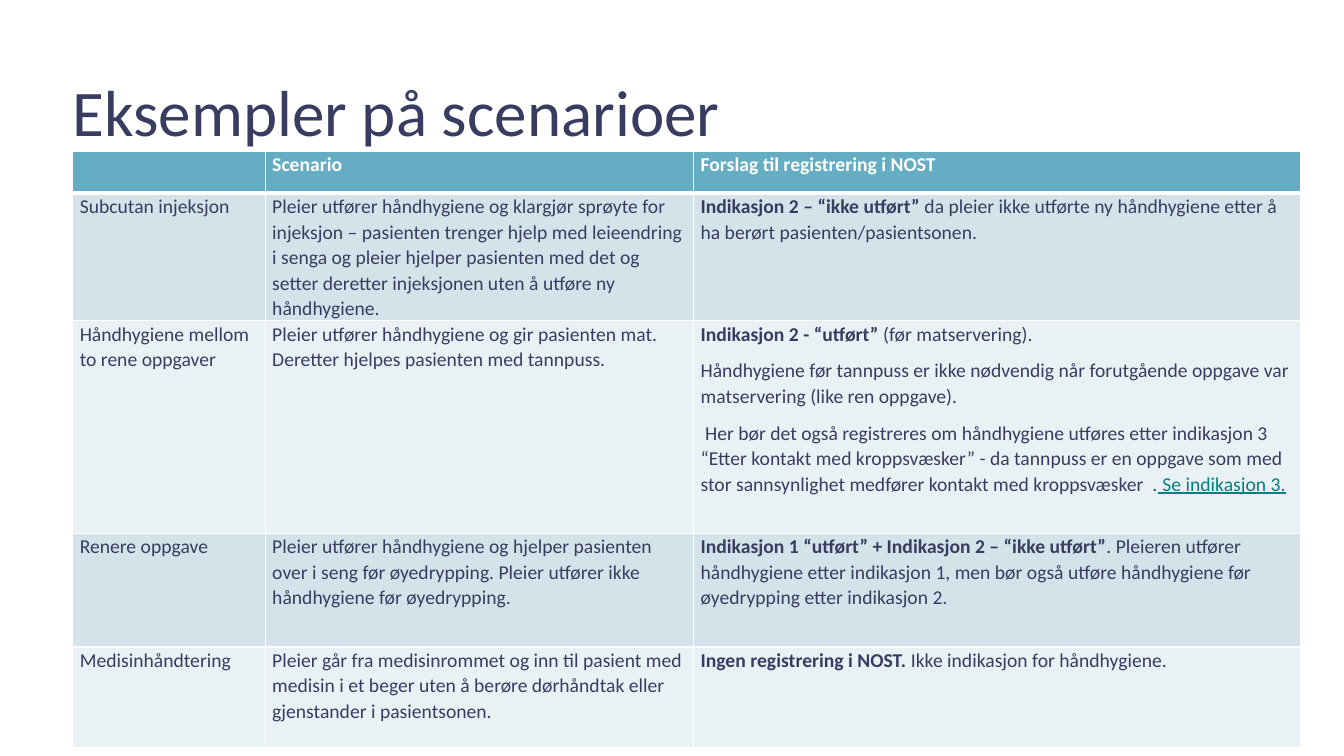
import pptx
import pptx.dml.color
import pptx.enum.text
import pptx.oxml
import pptx.oxml.ns
import pptx.util

Pt = pptx.util.Pt

TITLE = "Eksempler på scenarioer"

# A row is a list of cells, a cell a list of paragraphs, a paragraph a list of (style, text).
ROWS = [
    [
        [],
        [[("header", "Scenario")]],
        [[("header", "Forslag til registrering i NOST")]],
    ],
    [
        [[("body", "Subcutan injeksjon")]],
        [[("body", "Pleier utfører håndhygiene og klargjør sprøyte for injeksjon – pasienten "
                   "trenger hjelp med leieendring i senga og pleier hjelper pasienten med det "
                   "og setter deretter injeksjonen uten å utføre ny håndhygiene.")]],
        [[("strong", "Indikasjon 2 – “ikke utført”"),
          ("body", " da pleier ikke utførte ny håndhygiene etter å ha berørt "
                   "pasienten/pasientsonen.")]],
    ],
    [
        [[("body", "Håndhygiene mellom to rene oppgaver")]],
        [[("body", "Pleier utfører håndhygiene og gir pasienten mat. Deretter hjelpes "
                   "pasienten med tannpuss.")]],
        [
            [("strong", "Indikasjon 2 - “utført”"), ("body", " (før matservering).")],
            [("body", "Håndhygiene før tannpuss er ikke nødvendig når forutgående oppgave var "
                      "matservering (like ren oppgave).")],
            [("body", " Her bør det også registreres om håndhygiene utføres etter indikasjon 3 "
                      "“Etter kontakt med kroppsvæsker” - da tannpuss er en oppgave som med "
                      "stor sannsynlighet medfører kontakt med kroppsvæsker  ."),
             ("link", " Se indikasjon 3.")],
        ],
    ],
    [
        [[("body", "Renere oppgave")]],
        [[("body", "Pleier utfører håndhygiene og hjelper pasienten over i seng før "
                   "øyedrypping. Pleier utfører ikke håndhygiene før øyedrypping.")]],
        [[("strong", "Indikasjon 1 “utført” + Indikasjon 2 – “ikke utført”"),
          ("body", ". Pleieren utfører håndhygiene etter indikasjon 1, men bør også utføre "
                   "håndhygiene før øyedrypping etter indikasjon 2.")]],
    ],
    [
        [[("body", "Medisinhåndtering")]],
        [[("body", "Pleier går fra medisinrommet og inn til pasient med medisin i et beger "
                   "uten å berøre dørhåndtak eller gjenstander i pasientsonen.")]],
        [[("strong", "Ingen registrering i NOST. "),
          ("body", "Ikke indikasjon for håndhygiene.")]],
    ],
]

THEME = {
    "font": "Calibri",
    "title_size": 46.5,
    "cell_size": 14,
    "ink": "393C61",
    "header_fill": "65ADC3",
    "band_fills": ("EAF1F5", "D3E3E9"),
    "border": "FFFFFF",
    "styles": {
        "header": {"color": "FFFFFF", "bold": True},
        "body": {"color": "393C61", "bold": False},
        "strong": {"color": "393C61", "bold": True},
        "link": {"color": "008080", "bold": False, "underline": True},
    },
}

SLIDE_W, SLIDE_H = 960, 540
LEFT = 52
TITLE_TOP, TITLE_W, TITLE_H = 57, 855, 50.4
TABLE_TOP = 108
COL_WIDTHS = [137.5, 306, 433.5]
ROW_HEIGHTS = [30, 91, 152, 81, 72]
CELL_PAD = 5


def set_attrs(obj, values):
    for name, value in values.items():
        setattr(obj, name, value)


def rgb(code):
    return pptx.dml.color.RGBColor.from_string(code)


def format_font(font, size, color, **values):
    set_attrs(font, {"name": THEME["font"], "size": Pt(size), **values})
    font.color.rgb = rgb(color)


def add_title(slide):
    sp = slide.shapes.title
    set_attrs(sp, {"left": Pt(LEFT), "top": Pt(TITLE_TOP),
                   "width": Pt(TITLE_W), "height": Pt(TITLE_H)})
    tf = sp.text_frame
    tf.text = TITLE
    set_attrs(tf, {"margin_left": 0, "margin_top": 0, "margin_right": 0, "margin_bottom": 0,
                   "word_wrap": True,
                   "vertical_anchor": pptx.enum.text.MSO_ANCHOR.MIDDLE})
    p = tf.paragraphs[0]
    set_attrs(p, {"alignment": pptx.enum.text.PP_ALIGN.LEFT, "line_spacing": 0.9})
    format_font(p.runs[0].font, THEME["title_size"], THEME["ink"])


def add_borders(cell, row):
    """White 1 pt edges, with a 3 pt rule between header and body."""
    widths = {"L": 1, "R": 1, "T": 3 if row == 1 else 1, "B": 3 if row == 0 else 1}
    tc_pr = cell._tc.get_or_add_tcPr()
    for side, width in widths.items():
        tc_pr.append(pptx.oxml.parse_xml(
            f'<a:ln{side} {pptx.oxml.ns.nsdecls("a")} w="{Pt(width)}"><a:solidFill>'
            f'<a:srgbClr val="{THEME["border"]}"/></a:solidFill></a:ln{side}>'))


def fill_cell(cell, row, paragraphs):
    add_borders(cell, row)
    cell.fill.solid()
    cell.fill.fore_color.rgb = rgb(THEME["band_fills"][row % 2] if row
                                   else THEME["header_fill"])
    set_attrs(cell, {"margin_left": Pt(CELL_PAD), "margin_right": Pt(CELL_PAD),
                     "margin_top": 0, "margin_bottom": 0})
    tf = cell.text_frame
    for i, runs in enumerate(paragraphs):
        p = tf.add_paragraph() if i else tf.paragraphs[0]
        set_attrs(p, {"line_spacing": 1.07, "space_after": Pt(8)})
        for style, text in runs:
            r = p.add_run()
            r.text = text
            format_font(r.font, THEME["cell_size"], **THEME["styles"][style])


def add_scenario_table(slide):
    table = slide.shapes.add_table(
        len(ROWS), len(COL_WIDTHS), Pt(LEFT), Pt(TABLE_TOP),
        Pt(sum(COL_WIDTHS)), Pt(sum(ROW_HEIGHTS))).table
    for column, width in zip(table.columns, COL_WIDTHS):
        column.width = Pt(width)
    for i, (height, cells) in enumerate(zip(ROW_HEIGHTS, ROWS)):
        table.rows[i].height = Pt(height)
        for j, paragraphs in enumerate(cells):
            fill_cell(table.cell(i, j), i, paragraphs)


def main():
    prs = pptx.Presentation()
    set_attrs(prs, {"slide_width": Pt(SLIDE_W), "slide_height": Pt(SLIDE_H)})
    slide = prs.slides.add_slide(prs.slide_layouts.get_by_name("Title Only"))
    add_title(slide)
    add_scenario_table(slide)
    prs.save("out.pptx")


if __name__ == "__main__":
    main()
